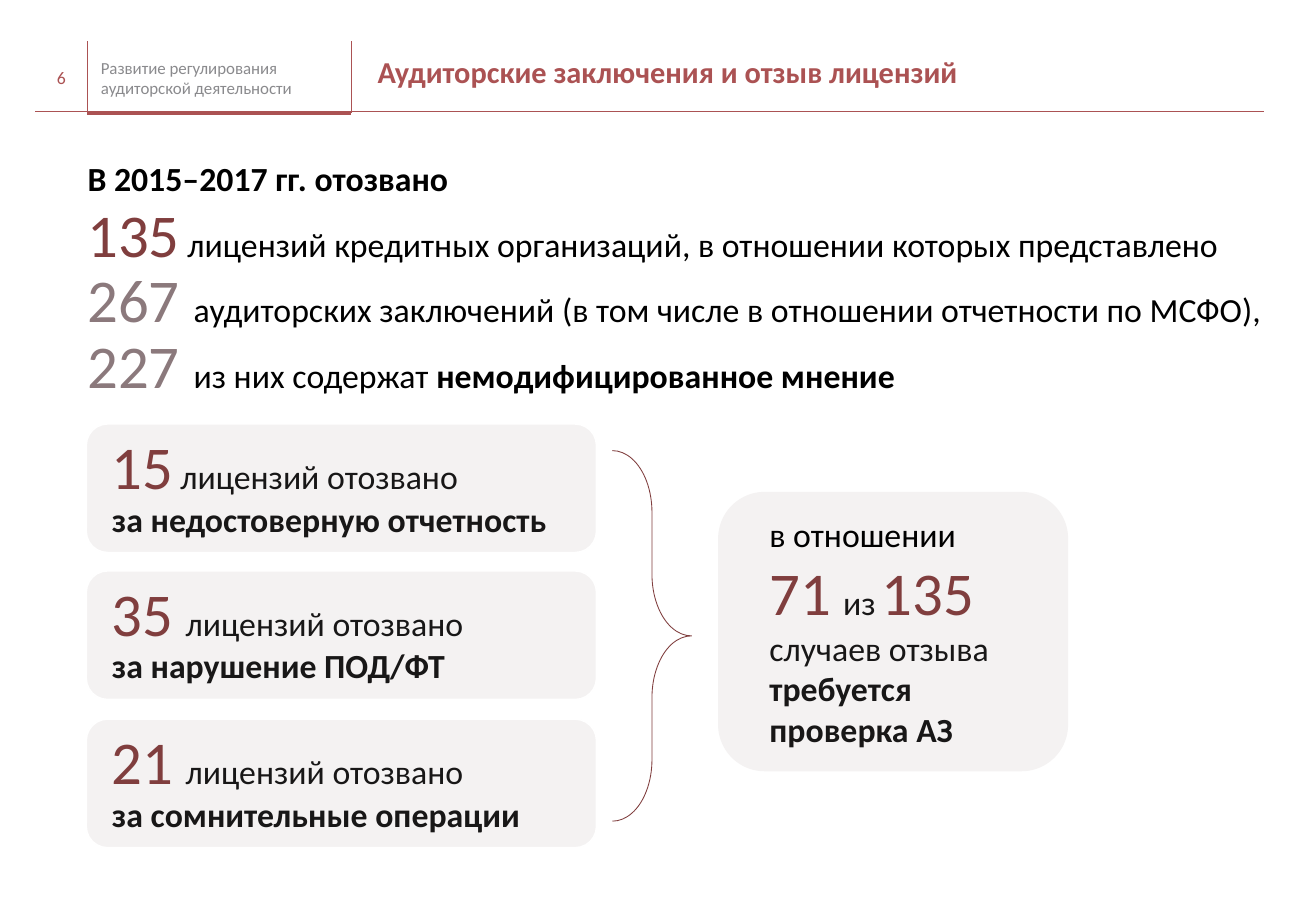
import pptx
import pptx.dml.color
import pptx.enum.shapes
import pptx.enum.text
import pptx.oxml
import pptx.util

PX = 9144
COLORS = {
    "white": "FFFFFF", "accent": "AB5253", "number": "803E3E", "muted": "8B797C",
    "label": "8A8A8D", "black": "000000", "text": "181717", "card": "F4F2F2",
}
STYLES = {
    "page": {"size": 10.5, "color": "accent"},
    "section": {"size": 10, "color": "label"},
    "title": {"size": 18, "color": "accent", "bold": True},
    "number": {"size": 36, "color": "number"},
    "muted": {"size": 36, "color": "muted"},
    "lead": {"size": 20, "color": "black"},
    "lead bold": {"size": 20, "color": "black", "bold": True},
    "body": {"size": 20, "color": "text"},
    "body bold": {"size": 20, "color": "text", "bold": True},
    "small gap": {"size": 16, "color": "number", "bold": True},
    "medium gap": {"size": 18, "color": "text"},
    "wide gap": {"size": 32, "color": "number", "bold": True},
}
BREAK = ("\n", None)
SHAPES = pptx.enum.shapes.MSO_SHAPE
MIDDLE = pptx.enum.text.MSO_ANCHOR.MIDDLE


def rgb(name):
    return pptx.dml.color.RGBColor.from_string(COLORS[name])


def px(*lengths):
    return [pptx.util.Emu(length * PX) for length in lengths]


def set_values(target, values):
    for name, value in values.items():
        setattr(target, name, value)


def write_text(shape, paragraphs, margins=(0, 0, 0, 0), anchor=None, **default_format):
    frame = shape.text_frame
    sides = ("margin_left", "margin_top", "margin_right", "margin_bottom")
    set_values(frame, dict(zip(sides, px(*margins))))
    set_values(frame, {"word_wrap": True, "vertical_anchor": anchor})
    for index, (runs, extra_format) in enumerate(paragraphs):
        paragraph = frame.add_paragraph() if index else frame.paragraphs[0]
        paragraph_format = {"alignment": pptx.enum.text.PP_ALIGN.LEFT}
        set_values(paragraph, paragraph_format | default_format | extra_format)
        for text, style in runs:
            if style is None:
                paragraph.add_line_break()
                continue
            run = paragraph.add_run()
            run.text = text
            values = {"name": "Calibri", "bold": False} | STYLES[style]
            run.font.color.rgb = rgb(values.pop("color"))
            values["size"] = pptx.util.Pt(values["size"])
            set_values(run.font, values)


def add_text(slide, box, paragraphs, **options):
    write_text(slide.shapes.add_textbox(*px(*box)), paragraphs, **options)


def add_rule(slide, start, end, width=0.25):
    kind = pptx.enum.shapes.MSO_CONNECTOR.STRAIGHT
    rule = slide.shapes.add_connector(kind, *px(*start, *end))
    rule.line.color.rgb = rgb("accent")
    rule.line.width = pptx.util.Pt(width)
    rule._element.spPr.append(pptx.oxml.parse_xml(
        '<a:effectLst xmlns:a="http://schemas.openxmlformats.org/drawingml/2006/main"/>'))


def add_card(slide, box, paragraphs, margins, outlined=False, **options):
    card = slide.shapes.add_shape(SHAPES.ROUNDED_RECTANGLE, *px(*box))
    card.shadow.inherit = False
    card.fill.solid()
    card.fill.fore_color.rgb = rgb("card")
    if outlined:
        card.line.color.rgb = rgb("white")
        card.line.width = pptx.util.Pt(1)
    else:
        card.line.fill.background()
    write_text(card, paragraphs, margins, MIDDLE, **options)


def add_header(slide, box):
    left, top, width, height = box
    base = top + height
    tab_left, tab_right = left + 43, left + 260
    add_rule(slide, (left, base), (tab_left, base))
    add_rule(slide, (tab_left, base + 1), (tab_right, base + 1), 2.25)
    add_rule(slide, (tab_right, base), (left + width, base))
    for x in (tab_left, tab_right):
        add_rule(slide, (x, top), (x, base + 1))
    add_text(slide, (left, top + 10, 43, 40), [([("6", "page")], {})],
             anchor=MIDDLE, alignment=pptx.enum.text.PP_ALIGN.CENTER)
    section = [("Развитие регулирования аудиторской деятельности", "section")]
    add_text(slide, (tab_left + 11, top + 13, 203, 34), [(section, {})], anchor=MIDDLE)
    title = [("Аудиторские заключения и отзыв лицензий", "title")]
    add_text(slide, (tab_right + 12, top - 4, 552, 62), [(title, {})],
             margins=(10, 5, 10, 5), anchor=MIDDLE, line_spacing=0.9)


def add_summary(slide, box):
    figures = [
        [("135", "number"),
         (" лицензий кредитных организаций, в отношении которых представлено", "lead")],
        [("267 ", "muted"),
         ("аудиторских заключений (в том числе в отношении отчетности по МСФО),", "lead")],
        [("227 ", "muted"), ("из них содержат ", "lead"),
         ("немодифицированное мнение", "lead bold")],
    ]
    heading = ([("В 2015–2017 гг. отозвано", "lead bold")],
               {"space_after": pptx.util.Pt(3)})
    spacing = {"line_spacing": pptx.util.Pt(39)}
    add_text(slide, box, [heading] + [(runs, spacing) for runs in figures])


def add_reasons(slide, box):
    left, top, width, height = box
    reasons = [
        ("15", "medium gap", "за недостоверную отчетность"),
        ("35", "wide gap", "за нарушение ПОД/ФТ"),
        ("21", "wide gap", "за сомнительные операции"),
    ]
    card_height = 106
    step = (height - card_height) / (len(reasons) - 1)
    for index, (number, gap, reason) in enumerate(reasons):
        runs = [(number, "number"), (" ", gap), ("лицензий отозвано", "body"),
                BREAK, (reason, "body bold")]
        card_box = (left, round(top + index * step), width, card_height)
        add_card(slide, card_box, [(runs, {})], (16, 14, 12, 14), outlined=True,
                 line_spacing=0.9, space_after=pptx.util.Pt(4.5))


def add_brace(slide, box):
    brace = slide.shapes.add_shape(SHAPES.LEFT_BRACE, *px(*box))
    brace.rotation = 180
    brace.adjustments[0] = 0.78
    brace.adjustments[1] = 0.5
    brace.shadow.inherit = False
    brace.fill.background()
    brace.line.color.rgb = rgb("number")
    brace.line.width = pptx.util.Pt(0.5)


def add_conclusion(slide, box):
    paragraphs = [
        ([("в отношении", "lead"), BREAK, ("71", "number"), (" ", "wide gap"),
          ("из", "body"), (" ", "small gap"), ("135", "number")], {}),
        ([("случаев отзыва", "body"), BREAK, ("требуется", "body bold")], {}),
        ([("проверка АЗ", "body bold")], {}),
    ]
    add_card(slide, box, paragraphs, (31, 15, 31, 15))


def main():
    presentation = pptx.Presentation()
    presentation.slide_width, presentation.slide_height = px(1083, 750)
    slide = presentation.slides.add_slide(presentation.slide_layouts[6])
    slide.background.fill.solid()
    slide.background.fill.fore_color.rgb = rgb("white")
    add_header(slide, (29, 34, 1011, 58))
    add_summary(slide, (72, 130, 971, 219))
    add_reasons(slide, (71, 349, 420, 349))
    add_brace(slide, (504, 371, 65, 305))
    add_conclusion(slide, (591, 405, 288, 230))
    presentation.save("out.pptx")


if __name__ == "__main__":
    main()
